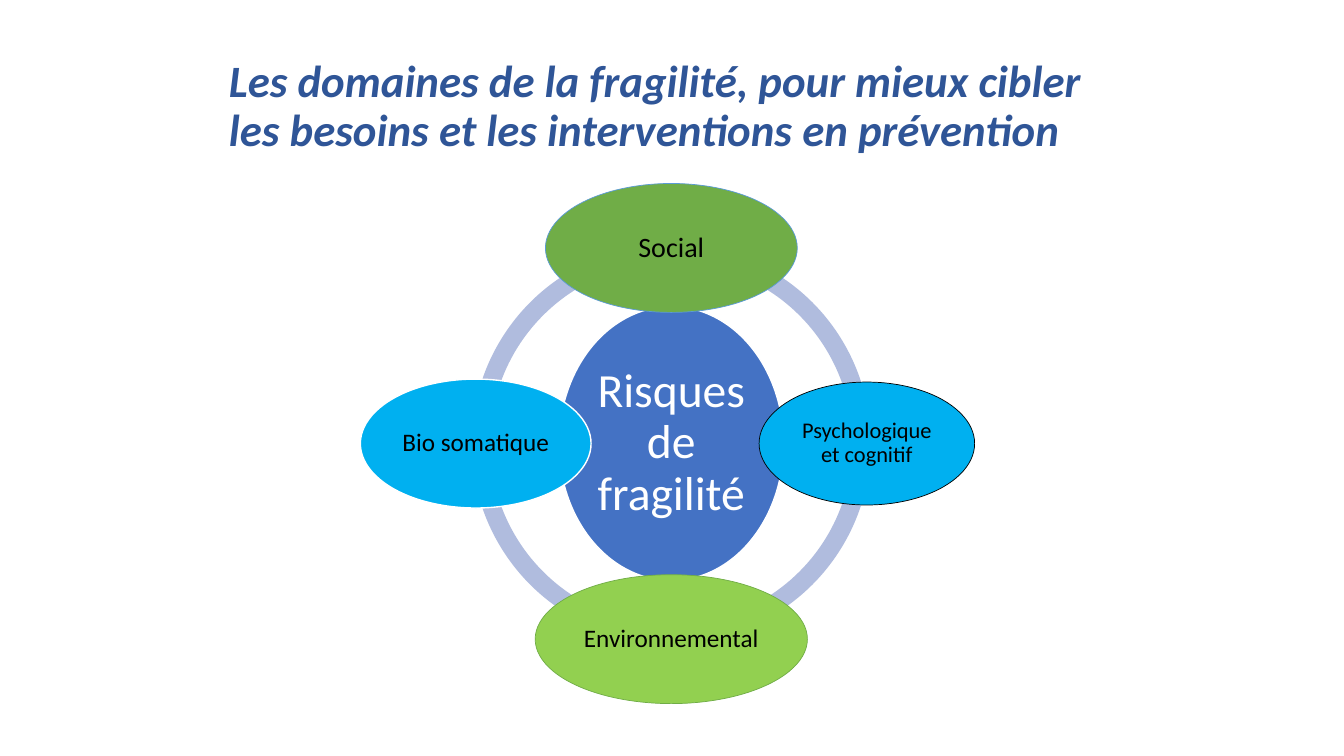
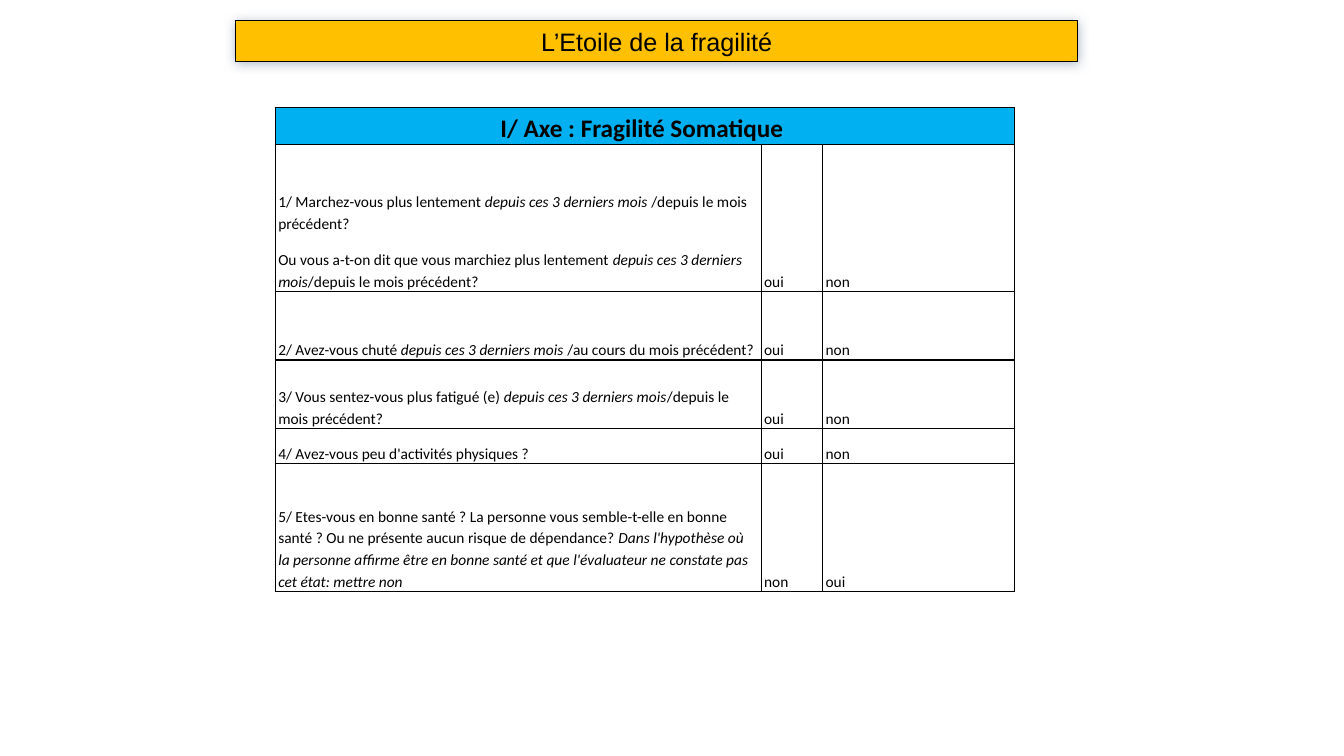
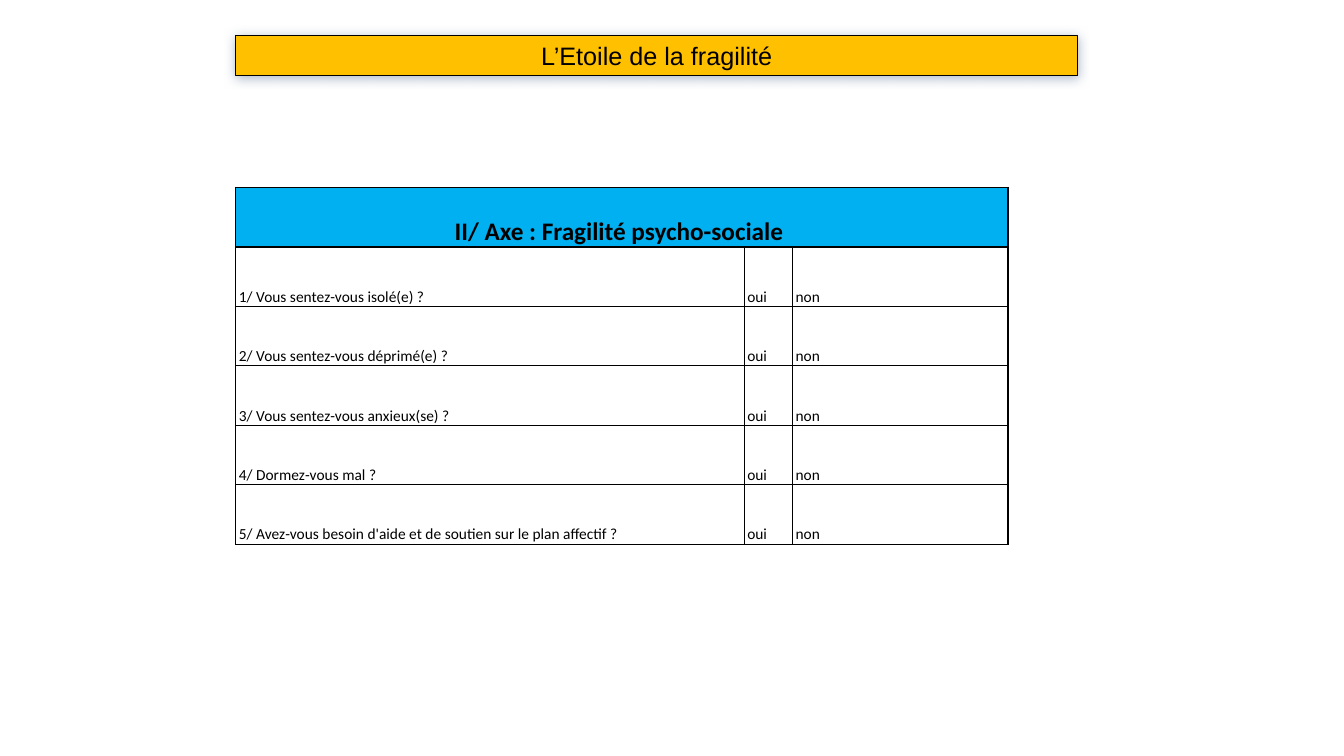
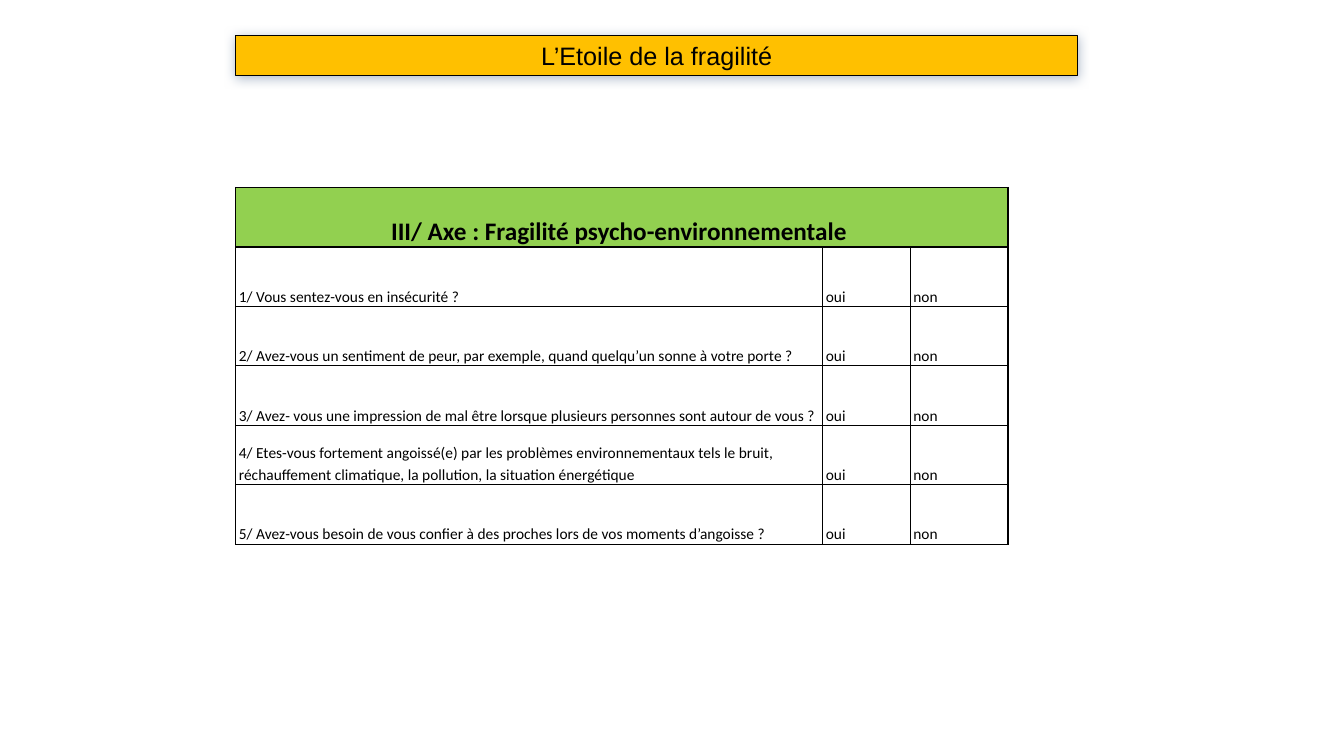
import lxml.etree
import pptx
import pptx.dml.color
import pptx.enum.shapes
import pptx.enum.text
import pptx.oxml
import pptx.oxml.ns
import pptx.util

RGBColor = pptx.dml.color.RGBColor
SHAPE = pptx.enum.shapes.MSO_SHAPE
ANCHOR = pptx.enum.text.MSO_ANCHOR
ALIGN = pptx.enum.text.PP_ALIGN
Pt = pptx.util.Pt
Inches = pptx.util.Inches

# Colours
BLACK = RGBColor(0x00, 0x00, 0x00)
WHITE = RGBColor(0xFF, 0xFF, 0xFF)
NAVY = RGBColor(0x2F, 0x55, 0x97)
BLUE = RGBColor(0x44, 0x72, 0xC4)
PALE_BLUE = RGBColor(0xB0, 0xBC, 0xDE)
EDGE_BLUE = RGBColor(0x5B, 0x9B, 0xD5)
SKY = RGBColor(0x00, 0xB0, 0xF0)
GREEN = RGBColor(0x70, 0xAD, 0x47)
LIME = RGBColor(0x92, 0xD0, 0x50)
AMBER = RGBColor(0xFF, 0xC0, 0x00)
SHADOW = RGBColor(0xAD, 0xB9, 0xCA)

SLIDE_WIDTH, SLIDE_HEIGHT = Inches(13.33), Inches(7.5)
TITLE_ONLY = 5
SIDES = ("left", "top", "width", "height")
MARGINS = ("margin_left", "margin_top", "margin_right", "margin_bottom")

# Boxes: left, top, width, height in percent of the slide
HEADING_BOX = (16.28, 5.87, 67.5, 16.67)
RING_BOX = (35.1, 32.27, 29.7, 52.8)
LOW_BANNER = (17.55, 4.67, 62.63, 5.33)
HIGH_BANNER = (17.55, 2.75, 62.63, 5.33)
WIDE_TABLE = (17.55, 24.8, 57.45, 47.2)
TALL_TABLE = (20.48, 14.27, 54.98, 63.87)

BANNER_TEXT = "L’Etoile de la fragilité"
YES_NO = ("oui", "non")

# Diagram: text, width and height in percent of the ring, fill, line, line width, size, text colour
CORE = ("Risques de fragilité", 56.3, 68.7, BLUE, WHITE, 1, 34, WHITE)
DOMAINS = [
    ("Social", 63.1, 32.3, GREEN, EDGE_BLUE, 0.5, 20, BLACK),
    ("Psychologique et cognitif", 54, 30.8, SKY, BLACK, 0.5, 16, BLACK),
    ("Environnemental", 68.2, 32.3, LIME, GREEN, 0.5, 18, BLACK),
    ("Bio somatique", 57.8, 32.3, SKY, WHITE, 1, 18, BLACK),
]
DIRECTIONS = [(0, -1), (1, 0), (0, 1), (-1, 0)]
ORBIT = 0.49

# Questionnaires: asterisks enclose italics, line breaks part paragraphs
QUESTIONNAIRES = [
    {
        "banner": HIGH_BANNER, "box": TALL_TABLE, "fill": SKY,
        "heading": "I/ Axe : Fragilité Somatique ",
        "columns": (4.82, 0.61, 1.9),
        "rows": (0.35, 1.46, 0.68, 0.68, 0.35, 1.27),
        "questions": [
            ("1/ Marchez-vous plus lentement *depuis ces 3 derniers mois* /depuis le mois précédent?\n"
             "Ou vous a-t-on dit que vous marchiez plus lentement *depuis ces 3 derniers mois*"
             "/depuis le mois précédent?", YES_NO),
            ("2/ Avez-vous chuté *depuis ces 3 derniers mois */au cours du mois précédent?", YES_NO),
            ("3/ Vous sentez-vous plus fatigué (e) *depuis ces 3 derniers mois*"
             "/depuis le mois précédent?", YES_NO),
            ("4/ Avez-vous peu d'activités physiques ?", YES_NO),
            ("5/ Etes-vous en bonne santé ? La personne vous semble-t-elle en bonne santé ? "
             "Ou ne présente aucun risque de dépendance? *Dans l'hypothèse où la personne affirme "
             "être en bonne santé et que l'évaluateur ne constate pas cet état: mettre non*",
             YES_NO[::-1]),
        ],
    },
    {
        "banner": LOW_BANNER, "box": WIDE_TABLE, "fill": SKY,
        "heading": "II/ Axe : Fragilité psycho-sociale ",
        "columns": (5.05, 0.48, 2.14),
        "rows": (1,) * 6,
        "questions": [
            ("1/ Vous sentez-vous isolé(e) ?", YES_NO),
            ("2/ Vous sentez-vous déprimé(e) ?", YES_NO),
            ("3/ Vous sentez-vous anxieux(se) ?", YES_NO),
            ("4/ Dormez-vous mal ?", YES_NO),
            ("5/ Avez-vous besoin d'aide et de soutien sur le plan affectif ?", YES_NO),
        ],
    },
    {
        "banner": LOW_BANNER, "box": WIDE_TABLE, "fill": LIME,
        "heading": "III/ Axe : Fragilité psycho-environnementale ",
        "columns": (5.83, 0.87, 0.97),
        "rows": (1,) * 6,
        "questions": [
            ("1/ Vous sentez-vous en insécurité ?", YES_NO),
            ("2/ Avez-vous un sentiment de peur, par exemple, quand quelqu’un sonne à votre porte ?",
             YES_NO),
            ("3/ Avez- vous une impression de mal être lorsque plusieurs personnes sont autour de vous ?",
             YES_NO),
            ("4/ Etes-vous fortement angoissé(e) par les problèmes environnementaux tels le bruit, "
             "réchauffement climatique, la pollution, la situation énergétique", YES_NO),
            ("5/ Avez-vous besoin de vous confier à des proches lors de vos moments d’angoisse ?",
             YES_NO),
        ],
    },
]


def apply(target, values):
    for name, value in values.items():
        setattr(target, name, value)


def on_slide(box):
    """Turn percentages of the slide into lengths."""
    extents = (SLIDE_WIDTH, SLIDE_HEIGHT) * 2
    return [round(share * extent / 100) for share, extent in zip(box, extents)]


def write(para, text, color, font, layout):
    """Fill a paragraph, with text between asterisks in italics."""
    apply(para, layout)
    for index, part in enumerate(text.split("*")):
        if part:
            span = para.add_run()
            span.text = part
            apply(span.font, {"name": "Calibri", "bold": False, "italic": index % 2 == 1, **font})
            span.font.color.rgb = color


def paint(shape, fill, line=None, line_width=0):
    shape.fill.solid()
    shape.fill.fore_color.rgb = fill
    if line is None:
        shape.line.fill.background()
    else:
        shape.line.color.rgb = line
        shape.line.width = Pt(line_width)


def place_title(page, box, text, color, font, layout, anchor):
    title = page.shapes.title
    apply(title, dict(zip(SIDES, on_slide(box))))
    frame = title.text_frame
    apply(frame, {"word_wrap": True, "vertical_anchor": anchor,
                  "auto_size": pptx.enum.text.MSO_AUTO_SIZE.NONE})
    write(frame.paragraphs[0], text, color, font, layout)
    return title


# Banner shared by the questionnaires
def add_banner(page, box):
    banner = place_title(page, box, BANNER_TEXT, BLACK, {"name": "Arial", "size": Pt(18)},
                         {"alignment": ALIGN.CENTER, "line_spacing": 1.0}, ANCHOR.TOP)
    paint(banner, AMBER, BLACK, 0.75)
    banner._element.spPr.append(pptx.oxml.parse_xml(
        f'<a:effectLst {pptx.oxml.ns.nsdecls("a")}>'
        f'<a:outerShdw blurRad="{Pt(8.5)}" dist="{Pt(1)}" dir="5400000" rotWithShape="0">'
        f'<a:srgbClr val="{SHADOW}"/></a:outerShdw></a:effectLst>'))


# Ring of domains around the core
def add_oval(group, center, ring, oval):
    text, wide, high, fill, line, line_width, size, color = oval
    width, height = round(ring[2] * wide / 100), round(ring[3] * high / 100)
    shape = group.shapes.add_shape(SHAPE.OVAL, round(center[0] - width / 2),
                                   round(center[1] - height / 2), width, height)
    shape.shadow.inherit = False
    paint(shape, fill, line, line_width)
    frame = shape.text_frame
    apply(frame, {"word_wrap": True, "vertical_anchor": ANCHOR.MIDDLE,
                  **dict.fromkeys(MARGINS, Inches(0.03))})
    write(frame.paragraphs[0], text, color, {"size": Pt(size)},
          {"alignment": ALIGN.CENTER, "line_spacing": 0.9})


def add_domain_ring(page, box):
    ring = on_slide(box)
    left, top, width, height = ring
    group = page.shapes.add_group_shape()
    quarter = 54  # 90 degrees in adjustment units
    for index in range(4):
        arc = group.shapes.add_shape(SHAPE.BLOCK_ARC, *ring)
        arc.shadow.inherit = False
        paint(arc, PALE_BLUE)
        turns = (quarter * index, quarter * ((index + 1) % 4), 0.046)
        for place, value in enumerate(turns):
            arc.adjustments[place] = value
    middle = (left + width / 2, top + height / 2)
    add_oval(group, middle, ring, CORE)
    for (across, down), oval in zip(DIRECTIONS, DOMAINS):
        center = (middle[0] + across * ORBIT * width, middle[1] + down * ORBIT * height)
        add_oval(group, center, ring, oval)


# Question table
def add_borders(cell):
    properties = cell._tc.get_or_add_tcPr()
    for index, side in enumerate(("lnL", "lnR", "lnT", "lnB")):
        properties.insert(index, pptx.oxml.parse_xml(
            f'<a:{side} {pptx.oxml.ns.nsdecls("a")} w="{Pt(1)}"><a:solidFill>'
            f'<a:srgbClr val="{BLACK}"/></a:solidFill></a:{side}>'))


def fill_cell(cell, text, font, alignment):
    apply(cell, {"vertical_anchor": ANCHOR.BOTTOM,
                 **dict(zip(MARGINS, map(Inches, (0.03, 0.01, 0.03, 0))))})
    frame = cell.text_frame
    for index, line in enumerate(text.split("\n")):
        para = frame.add_paragraph() if index else frame.paragraphs[0]
        write(para, line, BLACK, font,
              {"alignment": alignment, "line_spacing": 1.15, "space_after": Pt(10)})


def add_question_table(page, sheet):
    left, top, width, height = on_slide(sheet["box"])
    columns, rows = sheet["columns"], sheet["rows"]
    table = page.shapes.add_table(len(rows), len(columns), left, top, width, height).table
    apply(table, {"first_row": False, "horz_banding": False})
    for column, share in zip(table.columns, columns):
        column.width = round(width * share / sum(columns))
    for row, share in zip(table.rows, rows):
        row.height = round(height * share / sum(rows))
    for cell in table.iter_cells():
        cell.fill.background()
        add_borders(cell)

    header = table.cell(0, 0)
    header.merge(table.cell(0, len(columns) - 1))
    header.fill.solid()
    header.fill.fore_color.rgb = sheet["fill"]
    fill_cell(header, sheet["heading"], {"size": Pt(18), "bold": True}, ALIGN.CENTER)

    for row, (question, answers) in enumerate(sheet["questions"], start=1):
        for column, text in enumerate((question, *answers)):
            fill_cell(table.cell(row, column), text, {"size": Pt(11)}, ALIGN.LEFT)


# Slides
def add_domains_slide(deck):
    page = deck.slides.add_slide(deck.slide_layouts[TITLE_ONLY])
    place_title(page, HEADING_BOX,
                "Les domaines de la fragilité, pour mieux cibler les besoins "
                "et les interventions en prévention",
                NAVY, {"size": Pt(32), "bold": True, "italic": True},
                {"alignment": ALIGN.LEFT, "line_spacing": 0.9}, ANCHOR.MIDDLE)
    add_domain_ring(page, RING_BOX)


def add_questionnaire_slide(deck, sheet):
    page = deck.slides.add_slide(deck.slide_layouts[TITLE_ONLY])
    add_banner(page, sheet["banner"])
    add_question_table(page, sheet)


def main():
    deck = pptx.Presentation()
    apply(deck, {"slide_width": SLIDE_WIDTH, "slide_height": SLIDE_HEIGHT})
    add_domains_slide(deck)
    for sheet in QUESTIONNAIRES:
        add_questionnaire_slide(deck, sheet)
    deck.save("out.pptx")


if __name__ == "__main__":
    main()
